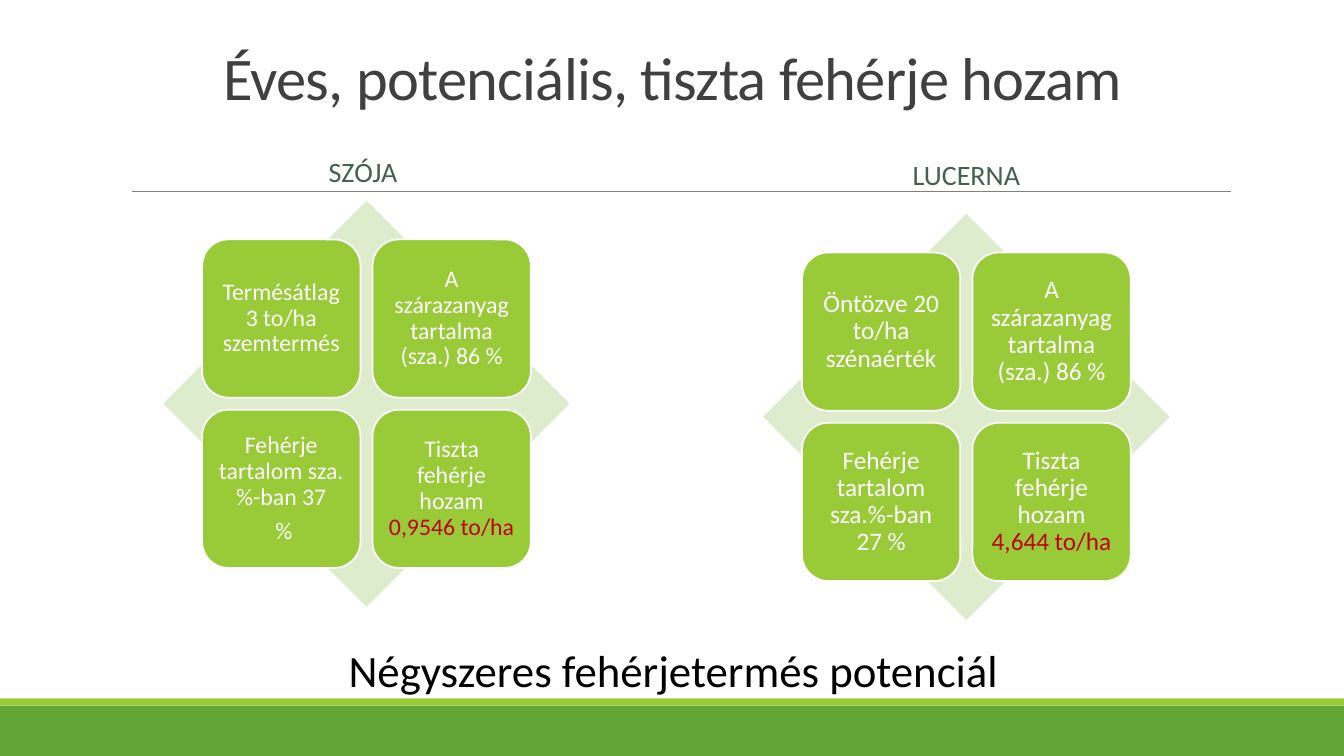
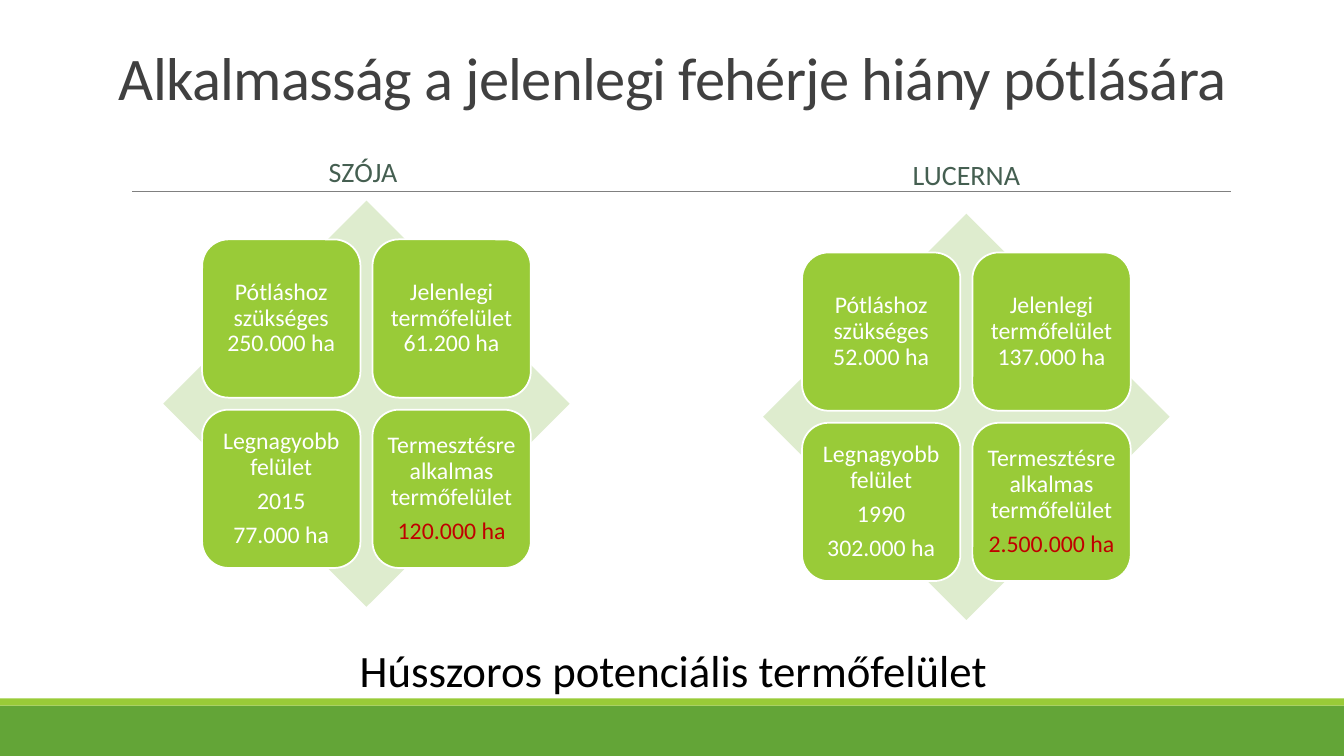
"""Build two slides comparing the protein potential of soy and alfalfa."""
import lxml.etree
import pptx
import pptx.dml.color
import pptx.enum.shapes
import pptx.enum.text
import pptx.oxml.ns
import pptx.util

Inches = pptx.util.Inches
Pt = pptx.util.Pt
RGBColor = pptx.dml.color.RGBColor
SHAPE = pptx.enum.shapes.MSO_SHAPE
ANCHOR = pptx.enum.text.MSO_ANCHOR
CENTER = pptx.enum.text.PP_ALIGN.CENTER

GREEN = RGBColor(0x63, 0xA5, 0x37)
LIME = RGBColor(0x99, 0xCB, 0x38)
PALE_GREEN = RGBColor(0xDE, 0xEC, 0xCE)
GREY = RGBColor(0x80, 0x80, 0x80)
CHARCOAL = RGBColor(0x40, 0x40, 0x40)
DARK_GREEN = RGBColor(0x45, 0x5F, 0x51)
RED = RGBColor(0xC0, 0x00, 0x00)
WHITE = RGBColor(0xFF, 0xFF, 0xFF)
BLACK = RGBColor(0x00, 0x00, 0x00)

SLIDES = [
    {
        "title": "Éves, potenciális, tiszta fehérje hozam",
        "caption": "Négyszeres fehérjetermés potenciál",
        "tile_sizes": (17, 18),
        "tiles": (
            [
                [["Termésátlag 3 to/ha szemtermés"]],
                [["A szárazanyag tartalma (sza.) 86 %"]],
                [["Fehérje tartalom sza.%-ban 37"], [" %"]],
                [["Tiszta fehérje hozam ", ("0,9546 to/ha", RED)]],
            ],
            [
                [["Öntözve 20 to/ha szénaérték"]],
                [["A szárazanyag tartalma (sza.) 86 %"]],
                [["Fehérje tartalom sza.%-ban 27 %"]],
                [["Tiszta fehérje hozam ", ("4,644 to/ha", RED)]],
            ],
        ),
    },
    {
        "title": "Alkalmasság a jelenlegi fehérje hiány pótlására",
        "caption": "Hússzoros potenciális termőfelület",
        "tile_sizes": (17, 17),
        "tiles": (
            [
                [["Pótláshoz szükséges 250.000 ha"]],
                [["Jelenlegi termőfelület 61.200 ha"]],
                [["Legnagyobb felület"], ["2015"], ["77.000 ha"]],
                [["Termesztésre alkalmas termőfelület"], [("120.000 ha", RED)]],
            ],
            [
                [["Pótláshoz szükséges 52.000 ha"]],
                [["Jelenlegi termőfelület 137.000 ha"]],
                [["Legnagyobb felület"], ["1990"], ["302.000 ha"]],
                [["Termesztésre alkalmas termőfelület"], [("2.500.000 ha", RED)]],
            ],
        ),
    },
]

CROPS = [
    {"name": "SZÓJA", "heading": (0.78, 1.5, 5.64, 0.45), "diamond": (1.62, 1.99)},
    {"name": "LUCERNA", "heading": (6.75, 1.5, 5.67, 0.49), "diamond": (7.57, 2.12)},
]
BANDS = [((0, 7, 13.33, 0.5), GREEN), ((0, 6.93, 13.33, 0.07), LIME)]
TITLE_BOX = (0.92, 0.4, 11.5, 0.77)
CAPTION_BOX = (3.07, 6.33, 7.22, 0.64)
RULE = (1.31, 1.9, 12.21, 1.9)
DIAMOND_SIZE, TILE_SIZE, TILE_STEP = 4.03, 1.57, 1.69
TILE_MARGIN = (DIAMOND_SIZE - TILE_SIZE - TILE_STEP) / 2

TITLE = {
    "frame": {"vertical_anchor": ANCHOR.BOTTOM},
    "paragraph": {"line_spacing": 0.85},
    "size": 43.2, "color": CHARCOAL, "tracking": -50,
}
HEADING = {
    "frame": {"vertical_anchor": ANCHOR.MIDDLE},
    "paragraph": {"line_spacing": 0.9, "space_before": Pt(12), "space_after": Pt(2)},
    "size": 20, "color": DARK_GREEN,
}
TILE = {
    "frame": {
        "vertical_anchor": ANCHOR.MIDDLE,
        **{f"margin_{side}": Inches(0.07) for side in ("left", "top", "right", "bottom")},
    },
    "paragraph": {"line_spacing": 0.9, "space_after": Pt(6)},
    "color": WHITE,
}
CAPTION = {
    "frame": {"auto_size": pptx.enum.text.MSO_AUTO_SIZE.SHAPE_TO_FIT_TEXT},
    "paragraph": {},
    "size": 32, "color": BLACK,
}


def set_attributes(target, values):
    for name, value in values.items():
        setattr(target, name, value)


def write_text(shape, paragraphs, style):
    frame = shape.text_frame
    set_attributes(frame, {"word_wrap": True, **style["frame"]})
    for index, runs in enumerate(paragraphs):
        paragraph = frame.add_paragraph() if index else frame.paragraphs[0]
        set_attributes(paragraph, {"alignment": CENTER, **style["paragraph"]})
        for item in runs:
            text, color = (item, style["color"]) if isinstance(item, str) else item
            run = paragraph.add_run()
            run.text = text
            set_attributes(run.font, {"name": "Calibri", "size": Pt(style["size"])})
            run.font.color.rgb = color
            if "tracking" in style:
                run._r.get_or_add_rPr().set("spc", str(style["tracking"]))


def add_text(slide, box, text, style):
    write_text(slide.shapes.add_textbox(*map(Inches, box)), [[text]], style)


def add_filled(shapes, kind, box, fill, outline=None):
    shape = shapes.add_shape(kind, *map(Inches, box))
    shape.shadow.inherit = False
    shape.fill.solid()
    shape.fill.fore_color.rgb = fill
    if outline is None:
        shape.line.fill.background()
    else:
        shape.line.color.rgb = outline
        shape.line.width = Pt(1.25)
    return shape


def add_frame(slide):
    for box, color in BANDS:
        add_filled(slide.shapes, SHAPE.RECTANGLE, box, color)
    straight = pptx.enum.shapes.MSO_CONNECTOR.STRAIGHT
    rule = slide.shapes.add_connector(straight, *map(Inches, RULE))
    rule.line.color.rgb = GREY
    rule.line.width = Pt(0.5)
    lxml.etree.SubElement(rule._element.spPr, pptx.oxml.ns.qn("a:effectLst"))


def add_matrix(slide, corner, tiles, size):
    left, top = corner
    shapes = slide.shapes.add_group_shape().shapes
    add_filled(shapes, SHAPE.DIAMOND, (left, top, DIAMOND_SIZE, DIAMOND_SIZE), PALE_GREEN)
    for index, paragraphs in enumerate(tiles):
        row, column = divmod(index, 2)
        box = (
            left + TILE_MARGIN + column * TILE_STEP,
            top + TILE_MARGIN + row * TILE_STEP,
            TILE_SIZE,
            TILE_SIZE,
        )
        tile = add_filled(shapes, SHAPE.ROUNDED_RECTANGLE, box, LIME, WHITE)
        write_text(tile, paragraphs, {**TILE, "size": size})


def main():
    presentation = pptx.Presentation()
    set_attributes(presentation, {"slide_width": Inches(13.33), "slide_height": Inches(7.5)})
    for content in SLIDES:
        slide = presentation.slides.add_slide(presentation.slide_layouts[6])
        add_frame(slide)
        add_text(slide, TITLE_BOX, content["title"], TITLE)
        for crop, tiles, size in zip(CROPS, content["tiles"], content["tile_sizes"]):
            add_text(slide, crop["heading"], crop["name"], HEADING)
            add_matrix(slide, crop["diamond"], tiles, size)
        add_text(slide, CAPTION_BOX, content["caption"], CAPTION)
    presentation.save("out.pptx")


if __name__ == "__main__":
    main()
